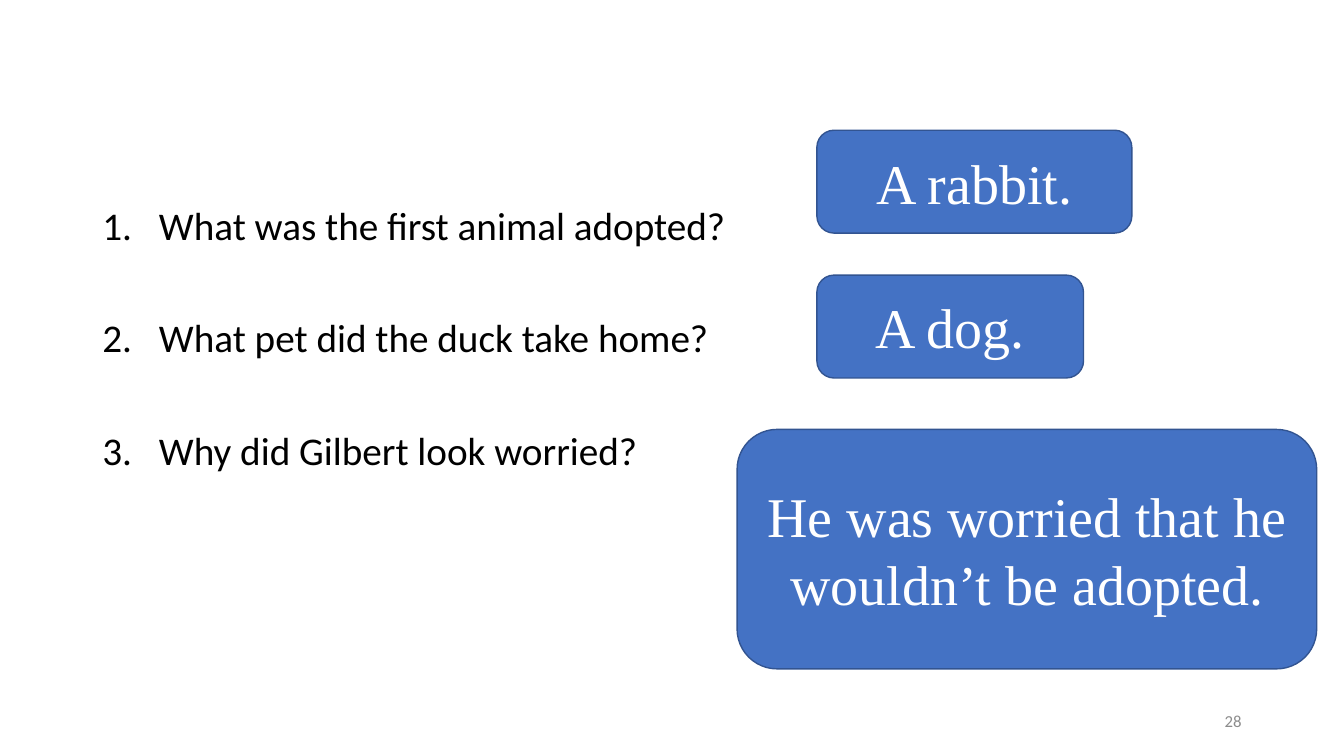
import pptx
import pptx.dml.color
import pptx.enum.shapes
import pptx.enum.text
import pptx.oxml.ns
import pptx.util
from dataclasses import dataclass
from lxml import etree

PX = 9525  # EMU per px, 96 px to the inch


@dataclass(frozen=True)
class Theme:
    body_font: str = "Calibri"
    answer_font: str = "Times New Roman"
    question_size: int = 28
    answer_size: int = 40
    number_size: int = 12
    text: str = "000000"
    answer_text: str = "FFFFFF"
    answer_fill: str = "4472C4"
    answer_line: str = "325491"
    number_text: str = "8C8C8C"


THEME = Theme()
ALIGN = pptx.enum.text.PP_ALIGN
MIDDLE = pptx.enum.text.MSO_ANCHOR.MIDDLE

QUESTIONS = [
    "What was the first animal adopted?",
    "What pet did the duck take home?",
    "Why did Gilbert look worried?",
]
ANSWERS = [
    ("A rabbit.", (778, 124, 300, 98)),
    ("A dog.", (778, 262, 254, 98)),
    ("He was worried that he wouldn’t be adopted.", (702, 409, 552, 228)),
]


def emu(box):
    return [length * PX for length in box]


def rgb(colour):
    return pptx.dml.color.RGBColor.from_string(colour)


def style(paragraph, font, size, colour, align):
    paragraph.font.name = font
    paragraph.font.size = pptx.util.Pt(size)
    paragraph.font.color.rgb = rgb(colour)
    paragraph.alignment = align


def number_paragraph(paragraph, hanging):
    """Give the paragraph automatic numbering with a hanging indent in px."""
    properties = paragraph._p.get_or_add_pPr()
    properties.set("marL", str(hanging * PX))
    properties.set("indent", str(-hanging * PX))
    numbering = etree.Element(pptx.oxml.ns.qn("a:buAutoNum"), type="arabicPeriod")
    properties.find(pptx.oxml.ns.qn("a:defRPr")).addprevious(numbering)


def add_questions(slide, box):
    frame = slide.shapes.add_textbox(*emu(box)).text_frame
    frame.word_wrap = True
    for index, question in enumerate(QUESTIONS):
        paragraph = frame.add_paragraph() if index else frame.paragraphs[0]
        paragraph.text = question
        style(paragraph, THEME.body_font, THEME.question_size, THEME.text, ALIGN.LEFT)
        paragraph.line_spacing = 0.9
        paragraph.space_before = pptx.util.Pt(50 if index else 0)
        number_paragraph(paragraph, 54)


def add_answer(slide, answer, box):
    card = slide.shapes.add_shape(
        pptx.enum.shapes.MSO_SHAPE.ROUNDED_RECTANGLE, *emu(box))
    card.shadow.inherit = False
    card.fill.solid()
    card.fill.fore_color.rgb = rgb(THEME.answer_fill)
    card.line.color.rgb = rgb(THEME.answer_line)
    card.line.width = pptx.util.Pt(1)
    frame = card.text_frame
    frame.word_wrap = True
    frame.vertical_anchor = MIDDLE
    frame.text = answer
    style(frame.paragraphs[0], THEME.answer_font, THEME.answer_size,
          THEME.answer_text, ALIGN.CENTER)


def add_slide_number(slide, number, box):
    frame = slide.shapes.add_textbox(*emu(box)).text_frame
    frame.word_wrap = True
    frame.vertical_anchor = MIDDLE
    frame.text = number
    style(frame.paragraphs[0], THEME.body_font, THEME.number_size,
          THEME.number_text, ALIGN.RIGHT)


def main():
    deck = pptx.Presentation()
    deck.slide_width, deck.slide_height = emu((1280, 720))
    slide = deck.slides.add_slide(deck.slide_layouts[6])
    add_questions(slide, (88, 192, 1104, 457))
    for answer, box in ANSWERS:
        add_answer(slide, answer, box)
    add_slide_number(slide, "28", (904, 667, 288, 38))
    deck.save("out.pptx")


if __name__ == "__main__":
    main()
